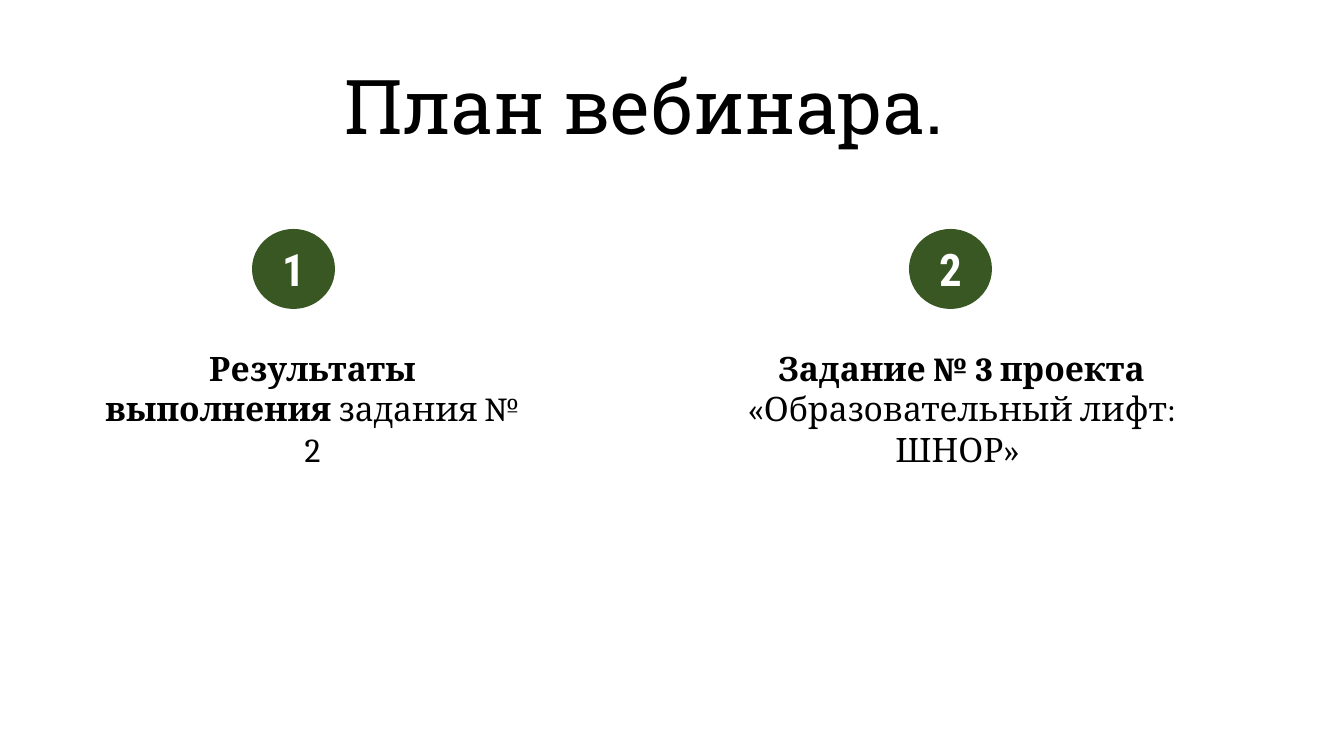
from pptx import Presentation
from pptx.dml.color import RGBColor
from pptx.enum.shapes import MSO_SHAPE
from pptx.enum.text import MSO_ANCHOR, MSO_AUTO_SIZE, PP_ALIGN
from pptx.util import Emu, Pt

BLACK = RGBColor(0, 0, 0)
WHITE = RGBColor(255, 255, 255)
GREEN = RGBColor(0x38, 0x57, 0x23)
PX_PER_INCH = 100.8

TITLE = {"name": "Roboto Slab", "size": Pt(54)}
NUMBER = {"name": "Roboto Condensed", "size": Pt(32), "bold": True}
TOPIC = {"name": "Cambria", "size": Pt(24), "bold": True}
DETAIL = {**TOPIC, "bold": False}


def px(length):
    return Emu(round(length * 914400 / PX_PER_INCH))


class SlideBuilder:
    def __init__(self, page):
        self.page = page

    def fill_text(self, frame, spans, color, align=None):
        frame.word_wrap = True
        para = frame.paragraphs[0]
        para.alignment = align
        for text, style in spans:
            span = para.add_run()
            span.text = text
            span.font.color.rgb = color
            for key, value in style.items():
                setattr(span.font, key, value)

    def text_box(self, bounds, spans, align=None):
        box = self.page.shapes.add_textbox(*map(px, bounds))
        self.fill_text(box.text_frame, spans, BLACK, align)
        box.text_frame.auto_size = MSO_AUTO_SIZE.SHAPE_TO_FIT_TEXT

    def badge(self, bounds, number):
        circle = self.page.shapes.add_shape(MSO_SHAPE.OVAL, *map(px, bounds))
        circle.shadow.inherit = False
        circle.fill.solid()
        circle.fill.fore_color.rgb = GREEN
        circle.line.fill.background()
        circle.text_frame.vertical_anchor = MSO_ANCHOR.MIDDLE
        self.fill_text(circle.text_frame, [(str(number), NUMBER)], WHITE, PP_ALIGN.CENTER)


def main():
    deck = Presentation()
    deck.slide_width, deck.slide_height = px(1344), px(756)
    builder = SlideBuilder(deck.slides.add_slide(deck.slide_layouts[6]))

    builder.text_box((335, 54, 626, 102), [("План вебинара.", TITLE)])

    topics = [
        (252, 94, 437, "Результаты выполнения ", "задания № 2"),
        (909, 672, 579, "Задание № 3 проекта ", "«Образовательный лифт: ШНОР» "),
    ]
    for number, (badge_left, left, width, topic, detail) in enumerate(topics, 1):
        builder.badge((badge_left, 229, 83, 80), number)
        spans = [(topic, TOPIC), (detail, DETAIL)]
        builder.text_box((left, 343, width, 92), spans, PP_ALIGN.CENTER)

    deck.save("out.pptx")


if __name__ == "__main__":
    main()
